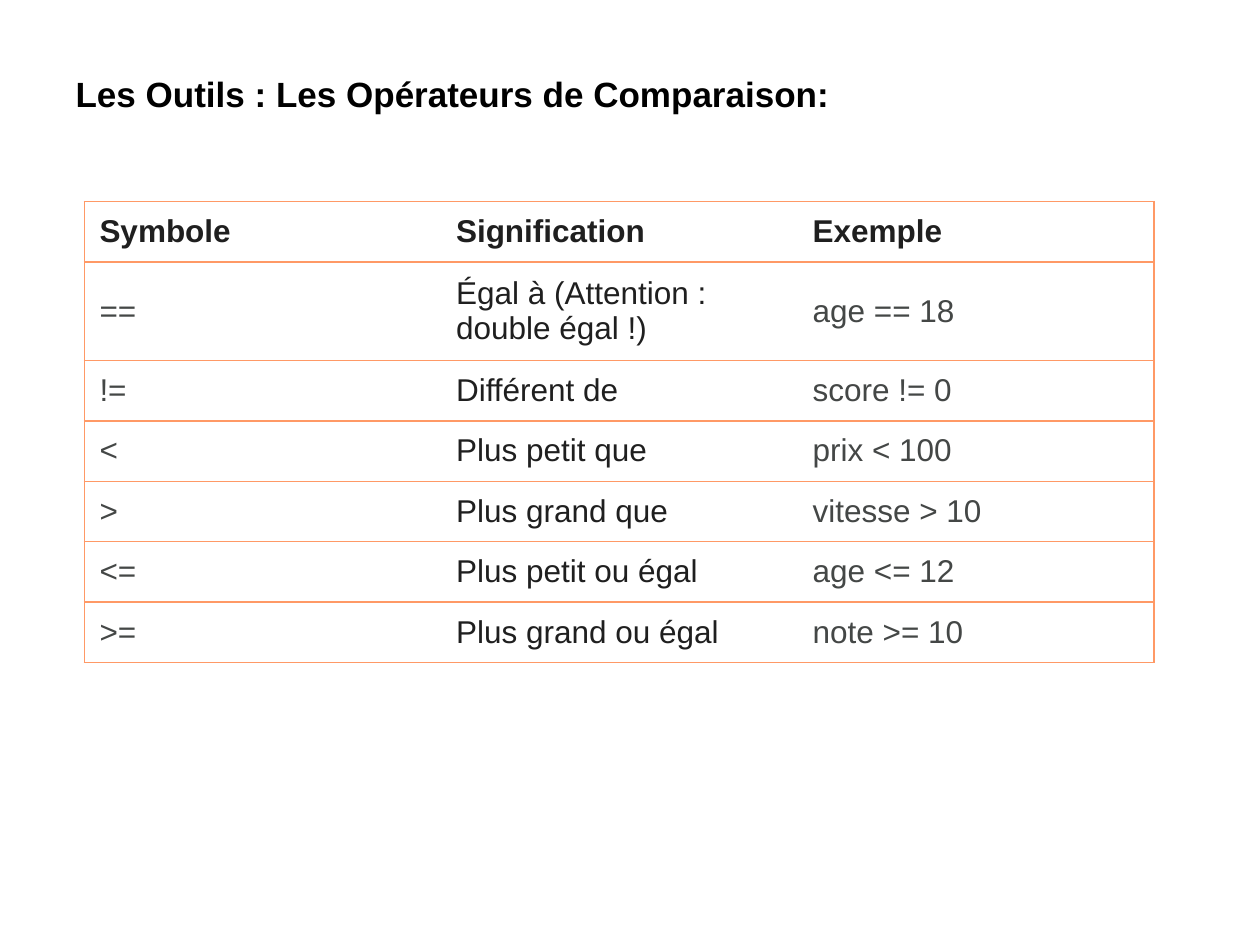
"""Build a slide with a table of comparison operators."""
from lxml.etree import SubElement
from pptx import Presentation
from pptx.dml.color import RGBColor
from pptx.enum.text import MSO_ANCHOR, PP_ALIGN
from pptx.oxml.ns import qn
from pptx.util import Inches, Pt

TITLE = "Les Outils : Les Opérateurs de Comparaison:"
ROWS = [
    ("Symbole", "Signification", "Exemple"),
    ("==", "Égal à (Attention : double égal !)", "age == 18"),
    ("!=", "Différent de", "score != 0"),
    ("<", "Plus petit que", "prix < 100"),
    (">", "Plus grand que", "vitesse > 10"),
    ("<=", "Plus petit ou égal", "age <= 12"),
    (">=", "Plus grand ou égal", "note >= 10"),
]
WIDTH, HIGH, TALL = 2.83, 0.48, 0.78
FONT = "Arial"
BLACK = RGBColor(0, 0, 0)
DARK = RGBColor(0x1F, 0x1F, 0x1F)
GRAY = RGBColor(0x44, 0x47, 0x46)
WHITE = RGBColor(0xFF, 0xFF, 0xFF)
ORANGE = RGBColor(0xFF, 0x99, 0x66)


def write(frame, text, size, color, bold):
    para = frame.paragraphs[0]
    para.alignment = PP_ALIGN.LEFT
    run = para.add_run()
    run.text = text
    font = run.font
    font.name, font.size, font.bold = FONT, Pt(size), bold
    font.color.rgb = color


def border(cell, sides):
    props = cell._tc.get_or_add_tcPr()
    for side in "LRTB":
        line = SubElement(props, qn(f"a:ln{side}"), w=str(Pt(1)))
        if side in sides:
            fill = SubElement(line, qn("a:solidFill"))
            SubElement(fill, qn("a:srgbClr"), val=str(ORANGE))
        else:
            SubElement(line, qn("a:noFill"))


def style(cell, sides):
    border(cell, sides)
    cell.fill.solid()
    cell.fill.fore_color.rgb = WHITE
    cell.vertical_anchor = MSO_ANCHOR.MIDDLE
    cell.margin_left = cell.margin_right = Inches(0.12)
    cell.margin_top = cell.margin_bottom = Inches(0.08)


def add_title(slide):
    title = slide.shapes.title
    title.left, title.top = Inches(0.5), Inches(0.3)
    title.width, title.height = Inches(9), Inches(0.88)
    frame = title.text_frame
    frame.word_wrap = True
    frame.vertical_anchor = MSO_ANCHOR.MIDDLE
    write(frame, TITLE, 20, BLACK, True)


def add_grid(slide):
    cols = len(ROWS[0])
    highs = [TALL if r == 1 else HIGH for r in range(len(ROWS))]
    table = slide.shapes.add_table(
        len(ROWS), cols, Inches(0.67), Inches(1.6),
        Inches(WIDTH * cols), Inches(sum(highs))).table
    table.horz_banding = False
    for col in table.columns:
        col.width = Inches(WIDTH)
    for r, row in enumerate(ROWS):
        table.rows[r].height = Inches(highs[r])
        for c, text in enumerate(row):
            cell = table.cell(r, c)
            style(cell, "TB" + {0: "L", cols - 1: "R"}.get(c, ""))
            color = DARK if r == 0 or c == 1 else GRAY
            write(cell.text_frame, text, 18, color, r == 0)


def main():
    deck = Presentation()
    deck.slide_width, deck.slide_height = Inches(10), Inches(7.5)
    slide = deck.slides.add_slide(deck.slide_layouts[5])
    add_title(slide)
    add_grid(slide)
    deck.save("out.pptx")


if __name__ == "__main__":
    main()
